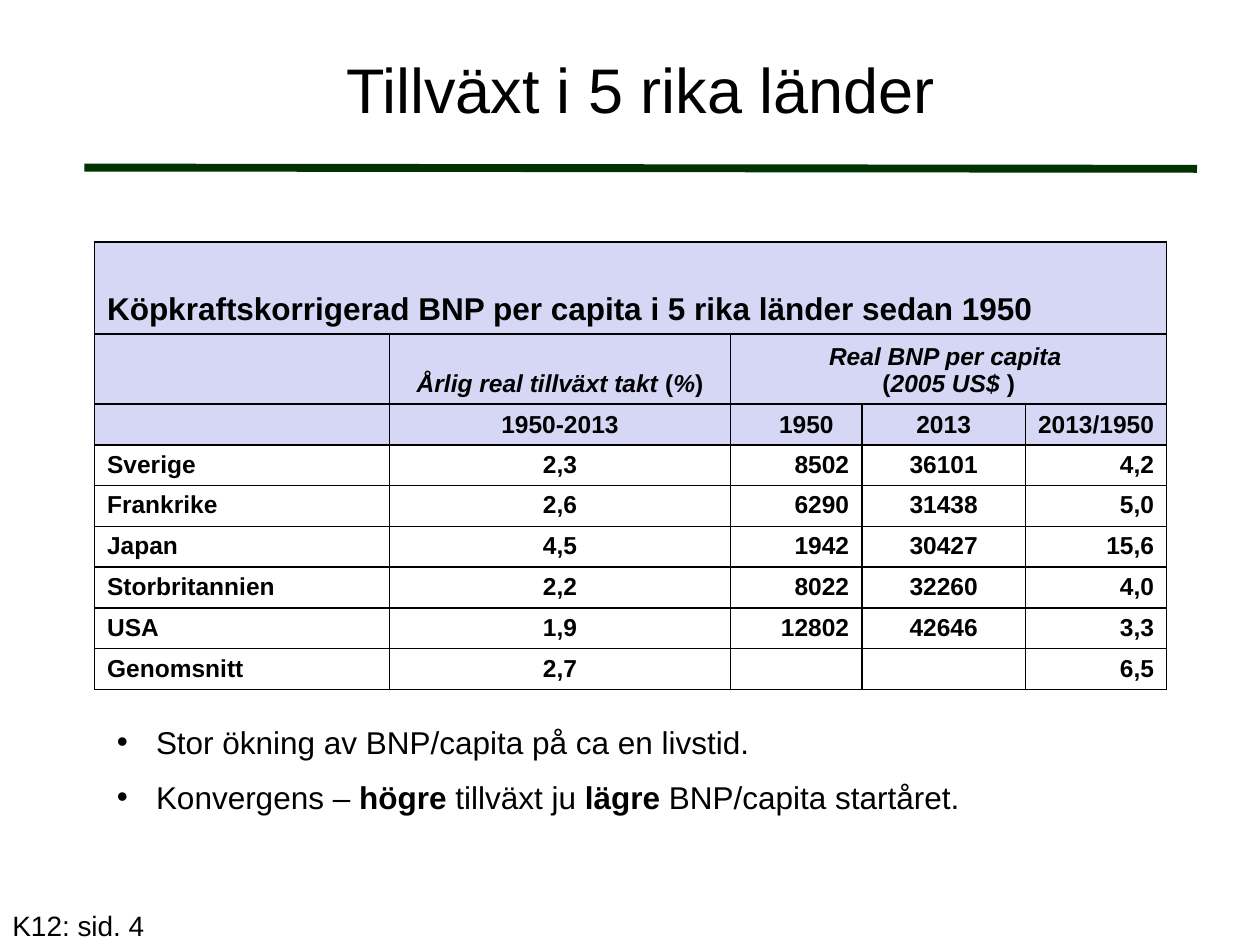
from lxml.etree import SubElement
from pptx import Presentation
from pptx.dml.color import RGBColor
from pptx.enum.shapes import MSO_CONNECTOR
from pptx.enum.text import MSO_ANCHOR as ANCHOR, PP_ALIGN as ALIGN
from pptx.oxml.ns import qn
from pptx.util import Inches, Pt

# Content: asterisks enclose emphasised words
TITLE = "Tillväxt i 5 rika länder"
FOOTER = "K12: sid. 4"
BULLETS = ["Stor ökning av BNP/capita på ca en livstid.",
           "Konvergens – *högre* tillväxt ju *lägre* BNP/capita startåret."]
ROWS = [
    ["Köpkraftskorrigerad BNP per capita i 5 rika länder sedan 1950", "", "", "", ""],
    ["", "*Årlig real tillväxt takt *(*%*)",
     "*Real BNP per capita *\n(*2005 US$ *)", "", ""],
    ["", "1950-2013", "1950", "2013", "2013/1950"],
    ["Sverige", "2,3", "8502", "36101", "4,2"],
    ["Frankrike", "2,6", "6290", "31438", "5,0"],
    ["Japan", "4,5", "1942", "30427", "15,6"],
    ["Storbritannien", "2,2", "8022", "32260", "4,0"],
    ["USA", "1,9", "12802", "42646", "3,3"],
    ["Genomsnitt", "2,7", "", "", "6,5"],
]
HEADER_ROWS = 3
MERGES = [(0, 0, 4), (1, 2, 4)]  # row, first column, last column
COL_WIDTHS = [2.34, 2.71, 1.04, 1.3, 1.12]
ROW_HEIGHTS = [0.73, 0.54] + [0.32] * 7
BODY_ALIGN = [ALIGN.LEFT, ALIGN.CENTER, ALIGN.RIGHT, ALIGN.CENTER, ALIGN.RIGHT]
BLACK, WHITE, GREEN, LILAC = "000000", "FFFFFF", "003300", "D6D6F5"


def rgb(value):
    return RGBColor.from_string(value)


def write(p, text, size=18, bold=False, align=ALIGN.LEFT, emphasis="bold"):
    p.alignment = align
    for n, line in enumerate(text.split("\n")):
        if n:
            p.add_line_break()
        for k, part in enumerate(line.split("*")):
            if not part:
                continue
            r = p.add_run()
            r.text = part
            r.font.name, r.font.size, r.font.bold = "Arial", Pt(size), bold
            r.font.color.rgb = rgb(BLACK)
            if k % 2:
                setattr(r.font, emphasis, True)
    if not text:  # keeps empty cells from growing their row
        p._p.get_or_add_endParaRPr().set("sz", str(size * 100))


def add_box(slide, left, top, width, height, anchor=ANCHOR.TOP):
    sp = slide.shapes.add_textbox(*map(Inches, (left, top, width, height)))
    tf = sp.text_frame
    tf.word_wrap = True
    tf.vertical_anchor = anchor
    return tf


def add_bullet(p):
    pPr = p._p.get_or_add_pPr()
    pPr.set("marL", str(Inches(0.31)))
    pPr.set("indent", str(-Inches(0.31)))
    SubElement(pPr, qn("a:buFont"), typeface="Arial")
    SubElement(pPr, qn("a:buChar"), char="•")


def add_borders(cell):
    tcPr = cell._tc.get_or_add_tcPr()
    for n, side in enumerate(("lnL", "lnR", "lnT", "lnB")):
        ln = tcPr.makeelement(qn("a:" + side), {"w": str(Pt(1))})
        fill = SubElement(ln, qn("a:solidFill"))
        SubElement(fill, qn("a:srgbClr"), val=BLACK)
        tcPr.insert(n, ln)


def add_data_table(slide):
    frame = slide.shapes.add_table(len(ROWS), len(COL_WIDTHS), Inches(0.75), Inches(1.92),
                                   Inches(sum(COL_WIDTHS)), Inches(sum(ROW_HEIGHTS)))
    table = frame.table
    for col, width in zip(table.columns, COL_WIDTHS):
        col.width = Inches(width)
    for row, height in zip(table.rows, ROW_HEIGHTS):
        row.height = Inches(height)
    for i, row in enumerate(ROWS):
        header = i < HEADER_ROWS
        for j, text in enumerate(row):
            cell = table.cell(i, j)
            cell.fill.solid()
            cell.fill.fore_color.rgb = rgb(LILAC if header else WHITE)
            cell.vertical_anchor = ANCHOR.BOTTOM if header else ANCHOR.MIDDLE
            cell.margin_top, cell.margin_bottom = Inches(0.04), Inches(0.05)
            align = ALIGN.CENTER if header and i else BODY_ALIGN[j]
            write(cell.text_frame.paragraphs[0], text, size=14 if i else 18, bold=True,
                  align=ALIGN.LEFT if i == 0 else align, emphasis="italic")
            add_borders(cell)
    table.cell(2, 2).margin_left = Inches(0.26)  # the 1950 heading sits right of centre
    ratio = table.cell(2, 4)  # narrow margins hold 2013/1950 on one line
    ratio.margin_left = ratio.margin_right = Inches(0.04)
    for i, first, last in MERGES:
        table.cell(i, first).merge(table.cell(i, last))


def main():
    prs = Presentation()
    prs.slide_width, prs.slide_height = Inches(10), Inches(7.5)
    slide = prs.slides.add_slide(prs.slide_layouts[6])

    # Title and rule
    rule = slide.shapes.add_connector(MSO_CONNECTOR.STRAIGHT, Inches(0.67), Inches(1.33),
                                      Inches(9.5), Inches(1.34))
    rule.line.color.rgb = rgb(GREEN)
    rule.line.width = Pt(4.5)
    SubElement(rule._element.spPr, qn("a:effectLst"))
    tf = add_box(slide, 0.67, 0.08, 8.83, 1.24, ANCHOR.MIDDLE)
    write(tf.paragraphs[0], TITLE, size=36, align=ALIGN.CENTER)

    add_data_table(slide)

    # Bullets
    tf = add_box(slide, 0.83, 5.72, 8.98, 1.35)
    for n, text in enumerate(BULLETS):
        p = tf.add_paragraph() if n else tf.paragraphs[0]
        p.line_spacing = 0.9
        p.space_after = Pt(12)
        add_bullet(p)
        write(p, text)

    # Page reference
    write(add_box(slide, 0, 7.16, 2.08, 0.37).paragraphs[0], FOOTER, size=16)

    prs.save("out.pptx")


if __name__ == "__main__":
    main()
